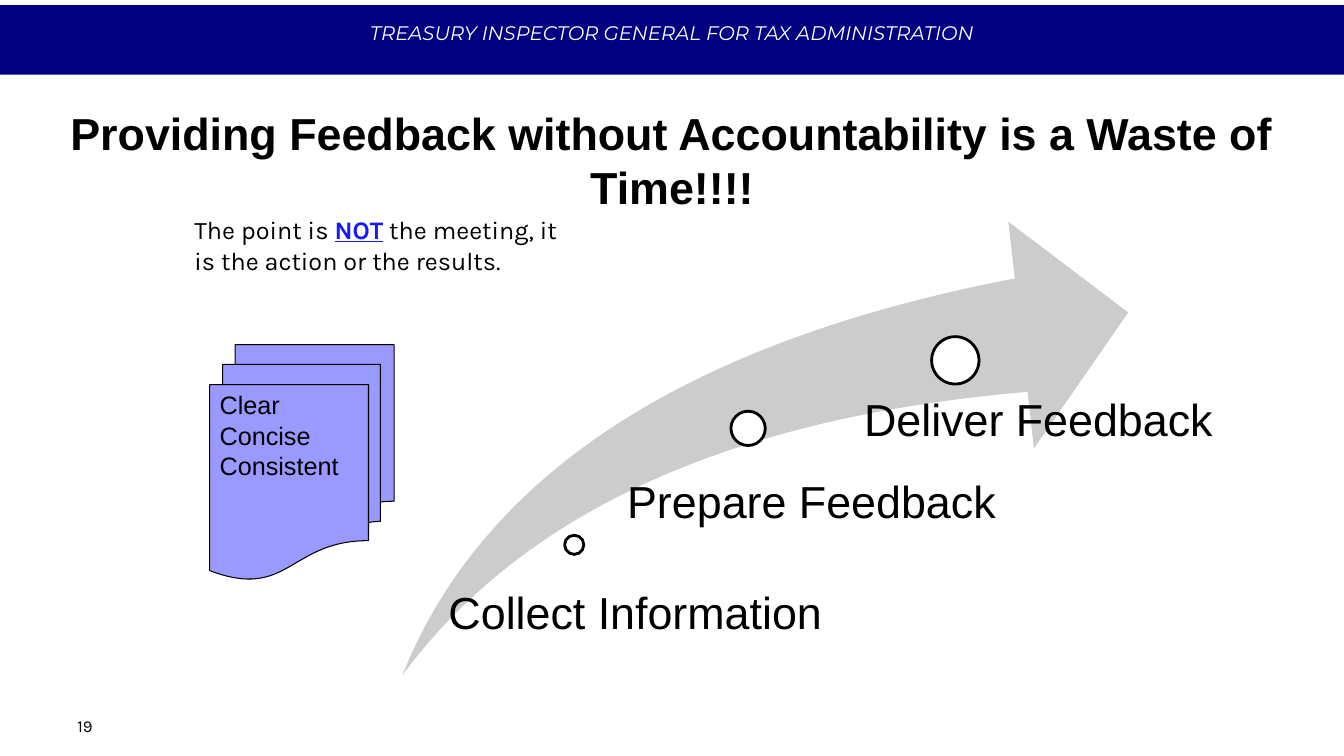
from dataclasses import dataclass
from typing import Optional

from pptx import Presentation
from pptx.dml.color import RGBColor
from pptx.enum.shapes import MSO_SHAPE
from pptx.enum.text import MSO_ANCHOR, PP_ALIGN
from pptx.shapes.autoshape import Shape
from pptx.slide import Slide
from pptx.util import Emu, Pt

EMU_PER_PX = 9144
NAVY = RGBColor(0x00, 0x00, 0x80)
WHITE = RGBColor(0xFF, 0xFF, 0xFF)
BLACK = RGBColor(0x00, 0x00, 0x00)
GREY = RGBColor(0xCC, 0xCC, 0xCC)
BLUE = RGBColor(0x18, 0x18, 0xFF)
LAVENDER = RGBColor(0x99, 0x99, 0xFF)


@dataclass(frozen=True)
class Box:
    left: int
    top: int
    width: int
    height: int


@dataclass(frozen=True)
class TextStyle:
    size: int
    family: str = "Arial"
    color: RGBColor = BLACK
    bold: bool = False
    italic: bool = False
    underline: bool = False
    align: PP_ALIGN = PP_ALIGN.LEFT
    anchor: MSO_ANCHOR = MSO_ANCHOR.TOP
    insets: tuple[int, int, int, int] = (10, 5, 10, 5)
    line_spacing: Optional[float] = None


@dataclass(frozen=True)
class Run:
    text: str
    style: TextStyle


@dataclass(frozen=True)
class Step:
    label: str
    label_box: Box
    inset: int
    marker: Box


HEADER = TextStyle(14, "Montserrat", WHITE, italic=True,
                   align=PP_ALIGN.CENTER, insets=(10, 16, 10, 0))
TITLE = TextStyle(32, bold=True, align=PP_ALIGN.CENTER)
BODY = TextStyle(18, "Karla")
EMPHASIS = TextStyle(18, "Karla", BLUE, bold=True, underline=True)
DOCUMENT = TextStyle(18)
PAGE_NUMBER = TextStyle(12, "Karla", anchor=MSO_ANCHOR.BOTTOM)

STEPS = [
    Step("Collect Information", Box(435, 586, 436, 39), 10, Box(560, 531, 19, 19)),
    Step("Prepare Feedback", Box(604, 476, 421, 53), 18, Box(725, 408, 34, 34)),
    Step("Deliver Feedback", Box(832, 395, 384, 55), 25, Box(924, 334, 47, 47)),
]


def px(length: int) -> Emu:
    return Emu(length * EMU_PER_PX)


def place(box: Box) -> tuple[Emu, Emu, Emu, Emu]:
    return px(box.left), px(box.top), px(box.width), px(box.height)


def write(shape: Shape, paragraphs: list[list[Run]]) -> None:
    frame_style = paragraphs[0][0].style
    left, top, right, bottom = frame_style.insets
    frame = shape.text_frame
    frame_format = {
        "word_wrap": True,
        "vertical_anchor": frame_style.anchor,
        "margin_left": px(left),
        "margin_top": px(top),
        "margin_right": px(right),
        "margin_bottom": px(bottom),
    }
    for name, value in frame_format.items():
        setattr(frame, name, value)
    for index, runs in enumerate(paragraphs):
        paragraph = frame.add_paragraph() if index else frame.paragraphs[0]
        paragraph.alignment = frame_style.align
        paragraph.line_spacing = frame_style.line_spacing
        for run in runs:
            text_run = paragraph.add_run()
            text_run.text = run.text
            style = run.style
            font_format = {
                "name": style.family,
                "size": Pt(style.size),
                "bold": style.bold,
                "italic": style.italic,
                "underline": style.underline,
            }
            for name, value in font_format.items():
                setattr(text_run.font, name, value)
            text_run.font.color.rgb = style.color


def add_text(slide: Slide, box: Box, runs: list[Run]) -> None:
    write(slide.shapes.add_textbox(*place(box)), [runs])


def add_figure(slide: Slide, kind: MSO_SHAPE, box: Box, fill: RGBColor,
               line_width: float = 0) -> Shape:
    shape = slide.shapes.add_shape(kind, *place(box))
    shape.shadow.inherit = False
    shape.fill.solid()
    shape.fill.fore_color.rgb = fill
    if line_width:
        shape.line.color.rgb = BLACK
        shape.line.width = Pt(line_width)
    else:
        shape.line.fill.background()
    return shape


def add_step(slide: Slide, step: Step) -> None:
    add_figure(slide, MSO_SHAPE.OVAL, step.marker, WHITE, 2)
    style = TextStyle(32, insets=(step.inset, 0, 0, 0), line_spacing=0.9)
    add_text(slide, step.label_box, [Run(step.label, style)])


def main() -> None:
    presentation = Presentation()
    presentation.slide_width = px(1333)
    presentation.slide_height = px(750)
    slide = presentation.slides.add_slide(presentation.slide_layouts[6])

    header = add_figure(slide, MSO_SHAPE.RECTANGLE, Box(0, 5, 1333, 69), NAVY)
    write(header, [[Run("TREASURY INSPECTOR GENERAL FOR TAX ADMINISTRATION", HEADER)]])
    add_text(slide, Box(33, 100, 1267, 50), [
        Run("Providing Feedback without Accountability is a Waste of Time!!!!", TITLE),
    ])

    swoosh = add_figure(slide, MSO_SHAPE.SWOOSH_ARROW, Box(399, 220, 720, 450), GREY)
    for index in range(2):
        swoosh.adjustments[index] = 0.25
    for step in STEPS:
        add_step(slide, step)

    add_text(slide, Box(67, 683, 311, 52), [Run("19", PAGE_NUMBER)])
    add_text(slide, Box(183, 208, 400, 71), [
        Run("The point is ", BODY),
        Run("NOT", EMPHASIS),
        Run(" the meeting, it is the action or the results.", BODY),
    ])

    documents = add_figure(slide, MSO_SHAPE.FLOWCHART_MULTIDOCUMENT,
                           Box(208, 342, 183, 233), LAVENDER, 0.75)
    write(documents, [[Run(word, DOCUMENT)] for word in ("Clear", "Concise", "Consistent")])

    presentation.save("out.pptx")


if __name__ == "__main__":
    main()
